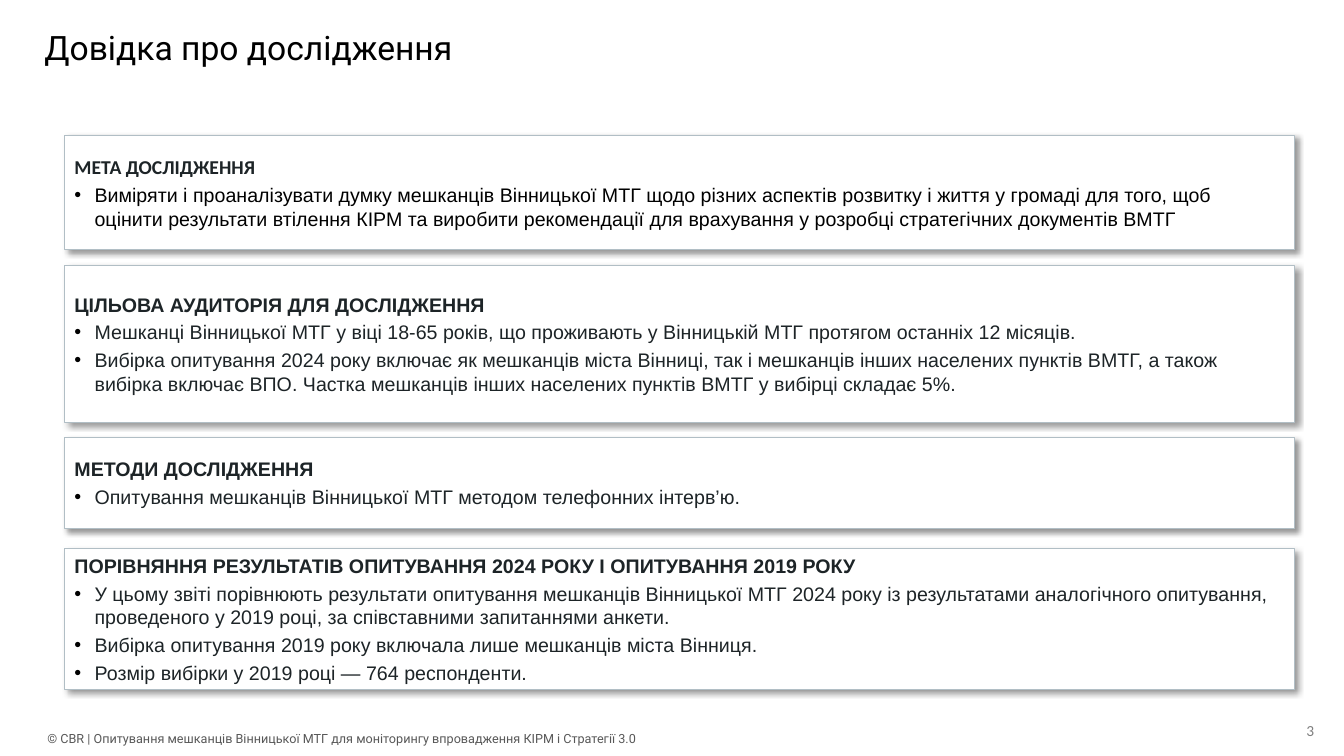
from lxml import etree
from pptx import Presentation
from pptx import util as u
from pptx.dml.color import RGBColor
from pptx.enum import shapes, text
from pptx.oxml import parse_xml
from pptx.oxml.ns import nsdecls, qn

INK, BLACK = "1D2427", "000000"
SECTION_LEFT, SECTION_WIDTH = 0.64, 12.2

# top, height, heading, heading font, bullet colour, bullets
SECTIONS = [
    (1.34, 1.14, "МЕТА ДОСЛІДЖЕННЯ", "Calibri", BLACK, [
        "Виміряти і проаналізувати думку мешканців Вінницької МТГ щодо різних аспектів розвитку і життя "
        "у громаді для того, щоб оцінити результати втілення КІРМ та виробити рекомендації для врахування "
        "у розробці стратегічних документів ВМТГ"]),
    (2.63, 1.56, "ЦІЛЬОВА АУДИТОРІЯ ДЛЯ ДОСЛІДЖЕННЯ", "Arial", INK, [
        "Мешканці Вінницької МТГ у віці 18-65 років, що проживають у Вінницькій МТГ протягом "
        "останніх 12 місяців.",
        "Вибірка опитування 2024 року включає як мешканців міста Вінниці, так і мешканців інших населених "
        "пунктів ВМТГ, а також вибірка включає ВПО. Частка мешканців інших населених пунктів ВМТГ "
        "у вибірці складає 5%."]),
    (4.34, 0.9, "МЕТОДИ ДОСЛІДЖЕННЯ", "Arial", INK, [
        "Опитування мешканців Вінницької МТГ методом телефонних інтерв’ю."]),
    (5.44, 1.4, "ПОРІВНЯННЯ РЕЗУЛЬТАТІВ ОПИТУВАННЯ 2024 РОКУ І ОПИТУВАННЯ 2019 РОКУ", "Arial", INK, [
        "У цьому звіті порівнюють результати опитування мешканців Вінницької МТГ 2024 року із результатами "
        "аналогічного опитування, проведеного у 2019 році, за співставними запитаннями анкети.",
        "Вибірка опитування 2019 року включала лише мешканців міста Вінниця.",
        "Розмір вибірки у 2019 році — 764 респонденти."]),
]


def color(value):
    return RGBColor.from_string(value)


def inches(box):
    return [u.Inches(length) for length in box]


def style(paragraph, font, size, ink, bold=False, align=text.PP_ALIGN.LEFT):
    paragraph.alignment = align
    paragraph.font.name = font
    paragraph.font.size = u.Pt(size)
    paragraph.font.bold = bold
    paragraph.font.color.rgb = color(ink)


def set_margins(frame, horizontal, vertical):
    frame.margin_left = frame.margin_right = u.Inches(horizontal)
    frame.margin_top = frame.margin_bottom = u.Inches(vertical)
    frame.vertical_anchor = text.MSO_ANCHOR.MIDDLE
    frame.word_wrap = True


def add_bullet(paragraph):
    properties = paragraph._p.get_or_add_pPr()
    properties.set("marL", str(u.Inches(0.2)))
    properties.set("indent", str(u.Inches(-0.2)))
    bullet_color = etree.SubElement(properties, qn("a:buClr"))
    etree.SubElement(bullet_color, qn("a:srgbClr"), val=BLACK)
    etree.SubElement(properties, qn("a:buFont"), typeface="Arial")
    etree.SubElement(properties, qn("a:buChar"), char="•")
    paragraph.space_before = u.Pt(3)


def add_shadow(card):
    card.shadow.inherit = False
    effects = card._element.spPr.find(qn("a:effectLst"))
    effects.append(parse_xml(
        f'<a:outerShdw {nsdecls("a")} blurRad="{u.Pt(4)}" dist="{u.Pt(3)}" dir="2700000" '
        f'algn="tl" rotWithShape="0"><a:srgbClr val="{BLACK}"><a:alpha val="40000"/></a:srgbClr>'
        '</a:outerShdw>'))


def add_title(slide, box):
    title = slide.shapes.title
    title.left, title.top, title.width, title.height = inches(box)
    set_margins(title.text_frame, 0.1, 0.05)
    title.text_frame.text = "Довідка про дослідження"
    heading = title.text_frame.paragraphs[0]
    heading.line_spacing = 0.9
    style(heading, "Roboto", 24, BLACK)


def add_section(slide, box, heading, heading_font, bullet_ink, bullets):
    card = slide.shapes.add_shape(shapes.MSO_SHAPE.RECTANGLE, *inches(box))
    card.fill.solid()
    card.fill.fore_color.rgb = color("FFFFFF")
    card.line.color.rgb = color("B1BEC5")
    card.line.width = u.Pt(0.75)
    add_shadow(card)
    frame = card.text_frame
    set_margins(frame, 0.1, 0.05)
    frame.text = heading
    style(frame.paragraphs[0], heading_font, 14, INK, bold=True)
    for wording in bullets:
        item = frame.add_paragraph()
        item.text = wording
        add_bullet(item)
        style(item, "Arial", 14, bullet_ink)


def add_label(slide, box, wording, font, size, ink, margins=(0, 0), align=text.PP_ALIGN.LEFT):
    frame = slide.shapes.add_textbox(*inches(box)).text_frame
    set_margins(frame, *margins)
    frame.text = wording
    style(frame.paragraphs[0], font, size, ink, align=align)


def build_study_slide(presentation):
    slide = presentation.slides.add_slide(presentation.slide_layouts[5])
    add_title(slide, (0.34, 0.13, 9.33, 0.73))
    for top, height, *content in SECTIONS:
        add_section(slide, (SECTION_LEFT, top, SECTION_WIDTH, height), *content)
    # Footer and page number
    add_label(slide, (0.47, 7.22, 10.29, 0.21),
              "© CBR | Опитування мешканців Вінницької МТГ для моніторингу впровадження КІРМ і Стратегії 3.0",
              "Roboto", 9, "585858")
    add_label(slide, (12.76, 7.1, 0.47, 0.29), "3", "Calibri", 11, "7F7F7F",
              margins=(0.13, 0.07), align=text.PP_ALIGN.CENTER)


def main():
    presentation = Presentation()
    presentation.slide_width = u.Inches(13.33)
    presentation.slide_height = u.Inches(7.5)
    build_study_slide(presentation)
    presentation.save("out.pptx")


if __name__ == "__main__":
    main()
